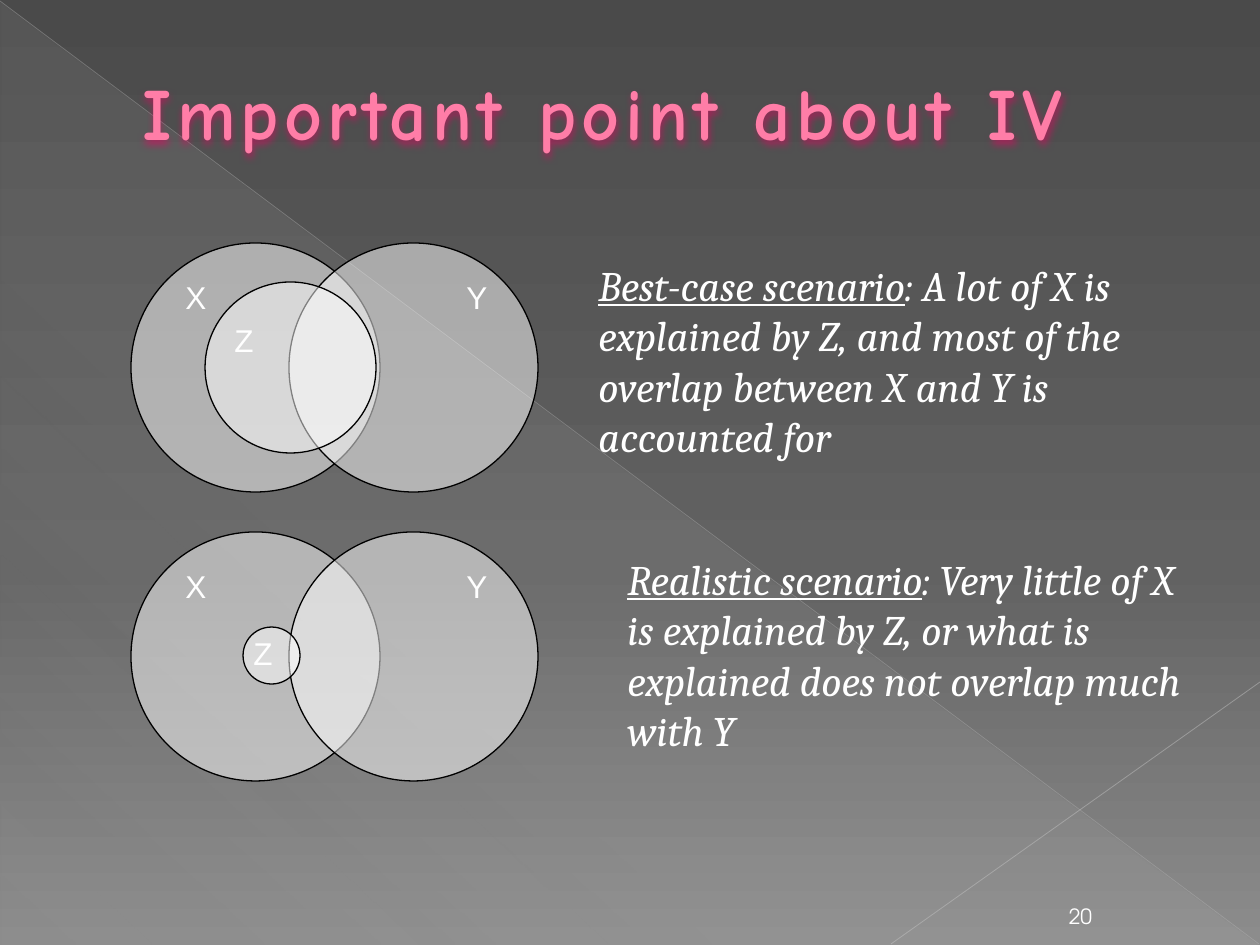
from lxml.etree import SubElement
from pptx import Presentation
from pptx.dml.color import RGBColor
from pptx.enum.shapes import MSO_CONNECTOR, MSO_SHAPE
from pptx.enum.text import MSO_ANCHOR, PP_ALIGN
from pptx.oxml.ns import qn
from pptx.util import Emu, Pt

WHITE = "FFFFFF"
BLACK = "000000"
PINK = "FF7DA7"
SHADOW_PINK = "E10562"


def px(length):
    return Emu(round(length * 914400 / 126))


def color(hex_code):
    return RGBColor.from_string(hex_code)


def add_child(parent, tag, **attributes):
    return SubElement(parent, qn(tag), {k: str(v) for k, v in attributes.items()})


def paint(color_format, hex_code, opacity=100):
    """Set a solid fill's colour and, below 100 percent, its opacity."""
    color_format.solid()
    color_format.fore_color.rgb = color(hex_code)
    if opacity < 100:
        solid = color_format._xPr.find(qn("a:solidFill"))
        add_child(solid[0], "a:alpha", val=opacity * 1000)


def paint_gradient(properties, stops, angle):
    """Replace the solid fill in a property element by (position, colour, opacity) stops."""
    solid = properties.find(qn("a:solidFill"))
    gradient = properties.makeelement(qn("a:gradFill"), {"rotWithShape": "1"})
    stop_list = add_child(gradient, "a:gsLst")
    for position, hex_code, opacity in stops:
        stop = add_child(stop_list, "a:gs", pos=position * 1000)
        stop_color = add_child(stop, "a:srgbClr", val=hex_code)
        if opacity < 100:
            add_child(stop_color, "a:alpha", val=opacity * 1000)
    add_child(gradient, "a:lin", ang=angle * 60000, scaled=0)
    properties.replace(solid, gradient)


def write(paragraph, text, font="Arial", size=18, fill=WHITE, bold=False,
          italic=False, underline=False, spacing=0):
    run = paragraph.add_run()
    run.text = text
    run.font.name = font
    run.font.size = Pt(size)
    run.font.color.rgb = color(fill)
    run.font.bold = bold
    run.font.italic = italic
    run.font.underline = underline
    if spacing:
        run.font._element.set("spc", str(spacing * 100))


class SlideBuilder:
    def __init__(self, slide):
        self.slide = slide
        self.shapes = slide.shapes

    def background(self, stops, angle):
        self.slide.background.fill.solid()
        properties = self.slide.element.find(".//" + qn("p:bgPr"))
        paint_gradient(properties, stops, angle)

    def corner_triangle(self, box, stops, angle):
        shape = self.shapes.add_shape(MSO_SHAPE.RIGHT_TRIANGLE, *map(px, box))
        shape.shadow.inherit = False
        shape.line.fill.background()
        shape.fill.solid()
        paint_gradient(shape._element.spPr, stops, angle)

    def line(self, ends, hex_code, width, opacity):
        connector = self.shapes.add_connector(MSO_CONNECTOR.STRAIGHT, *map(px, ends))
        connector.line.width = Pt(width)
        paint(connector.line.fill, hex_code, opacity)
        add_child(connector._element.spPr, "a:effectLst")

    def text_box(self, box, anchor=MSO_ANCHOR.TOP, align=PP_ALIGN.LEFT, indent=0):
        """Add an empty text box; return it with its first paragraph."""
        shape = self.shapes.add_textbox(*map(px, box))
        shape.text_frame.word_wrap = True
        shape.text_frame.vertical_anchor = anchor
        paragraph = shape.text_frame.paragraphs[0]
        paragraph.alignment = align
        if indent:
            paragraph._p.get_or_add_pPr().set("marL", str(px(indent)))
        return shape, paragraph

    def title(self, text, box):
        shape, paragraph = self.text_box(box, MSO_ANCHOR.MIDDLE, indent=67)
        write(paragraph, text, font="Comic Neue", size=42, fill=PINK, bold=True, spacing=3)
        effects = add_child(shape._element.spPr, "a:effectLst")
        shadow = add_child(effects, "a:outerShdw", blurRad=50800, dist=25400, dir=5400000)
        shadow_color = add_child(shadow, "a:srgbClr", val=SHADOW_PINK)
        add_child(shadow_color, "a:alpha", val=55000)

    def page_number(self, text, box):
        paragraph = self.text_box(box, MSO_ANCHOR.BOTTOM, PP_ALIGN.CENTER)[1]
        write(paragraph, text, font="TeX Gyre Adventor", size=12)

    def scenario(self, name, explanation, box):
        paragraph = self.text_box(box, indent=48)[1]
        style = {"font": "Cambria", "size": 24, "italic": True}
        write(paragraph, name, underline=True, **style)
        write(paragraph, explanation, **style)

    def circle(self, left, top, diameter):
        shape = self.shapes.add_shape(
            MSO_SHAPE.OVAL, px(left), px(top), px(diameter), px(diameter))
        shape.shadow.inherit = False
        paint(shape.fill, WHITE, 50)
        paint(shape.line.fill, BLACK)
        shape.line.width = Pt(0.75)

    def label(self, text, left, top):
        write(self.text_box((left, top, 42, 50))[1], text)

    def venn(self, top, z_circle, z_label):
        """Group circles X and Y with instrument Z, whose places are relative to top."""
        self.shapes = self.slide.shapes.add_group_shape().shapes
        for left in (131, 289):
            self.circle(left, top, 249)
        for text, left in (("X", 173), ("Y", 454)):
            self.label(text, left, top + 29)
        z_left, z_offset, z_diameter = z_circle
        self.circle(z_left, top + z_offset, z_diameter)
        label_left, label_offset = z_label
        self.label("Z", label_left, top + label_offset)
        self.shapes = self.slide.shapes


def main():
    presentation = Presentation()
    presentation.slide_width = px(1260)
    presentation.slide_height = px(945)
    builder = SlideBuilder(presentation.slides.add_slide(presentation.slide_layouts[6]))

    builder.background([(0, "4A4A4A", 100), (60, "626262", 100), (100, "8C8C8C", 100)], 90)
    builder.corner_triangle(
        (1, 2, 1258, 943), [(0, "D2D2D2", 10), (70, "D2D2D2", 8), (100, "D2D2D2", 1)], 133)
    builder.line((0, 1, 1259, 944), "BFBFBF", 0.39, 35)
    builder.line((1260, 682, 891, 944), "C6C6C6", 0.47, 45)

    builder.title("Important point about IV", (63, 53, 1197, 116))
    builder.page_number("20", (1046, 893, 69, 42))

    builder.venn(532, z_circle=(243, 95, 57), z_label=(241, 96))
    builder.scenario(
        "Realistic scenario",
        ": Very little of X is explained by Z, or what is explained does not overlap much with Y",
        (567, 547, 648, 272))
    builder.venn(243, z_circle=(205, 39, 171), z_label=(222, 72))
    builder.scenario(
        "Best-case scenario",
        ": A lot of X is explained by Z, and most of the overlap between X and Y is accounted for",
        (538, 253, 677, 261))

    presentation.save("out.pptx")


if __name__ == "__main__":
    main()
